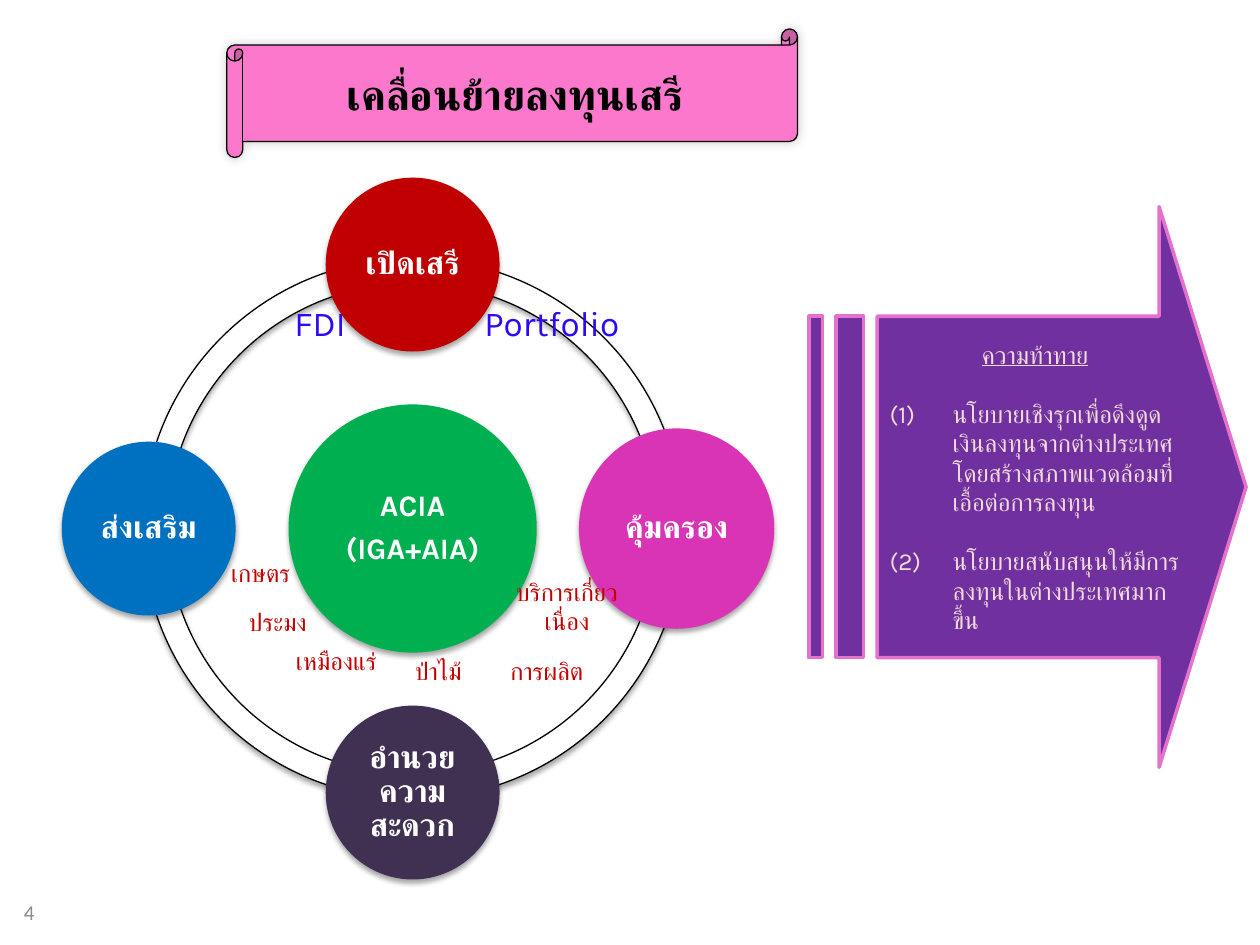
from lxml import etree
from pptx import Presentation
from pptx.dml.color import RGBColor
from pptx.enum.shapes import MSO_SHAPE
from pptx.enum.text import MSO_ANCHOR, PP_ALIGN
from pptx.oxml.ns import qn
from pptx.util import Inches, Pt

OVAL = MSO_SHAPE.OVAL
BLOCK_ARC = MSO_SHAPE.BLOCK_ARC
STRIPED_ARROW = MSO_SHAPE.STRIPED_RIGHT_ARROW
SCROLL = MSO_SHAPE.HORIZONTAL_SCROLL
MIDDLE = MSO_ANCHOR.MIDDLE
TOP = MSO_ANCHOR.TOP
CENTER = PP_ALIGN.CENTER
LEFT = PP_ALIGN.LEFT

WIDTH, HEIGHT = Inches(10), Inches(7.5)
COLUMNS, ROWS = 100, 75
FONT = "Karla"
RING_X, RING_Y, RING_RADIUS = 32.75, 41.95, 21.45
QUARTER = 54
SOFT_SHADOW = (35, 3.1, 1.8, 90)
SCROLL_SHADOW = (20, 6, 0, 225)

SECTORS = [("ACIA\n(IGA+AIA)", 0, 0, 19.7, 19.7, "00B050", 17),
           ("เปิดเสรี", 0, -20.95, 13.8, 13.8, "C00000", 18),
           ("คุ้มครอง", 20.95, 0, 15.5, 15.9, "D834B5", 18),
           ("อำนวยความสะดวก", 0, 20.95, 13.8, 13.8, "403152", 18),
           ("ส่งเสริม", -20.95, 0, 13.8, 13.8, "0070C0", 18)]
INDUSTRIES = [("การผลิต", 38.3, 51.6, 10.2, 3.4),
              ("ป่าไม้", 30.5, 51.6, 8.6, 3.4),
              ("เหมืองแร่", 21.1, 50.8, 11.2, 3.4),
              ("ประมง", 18, 47.7, 8.1, 3.4),
              ("เกษตร", 16.4, 43.8, 8.6, 3.4),
              ("บริการเกี่ยวเนื่อง", 39.1, 45.3, 11.8, 5.7)]
INVESTMENTS = [("FDI", 21.1, 23.4, 8.6, 4.4), ("Portfolio", 36.7, 23.4, 14.2, 4.4)]
CHALLENGES = ["ความท้าทาย",
              "นโยบายเชิงรุกเพื่อดึงดูดเงินลงทุนจากต่างประเทศ โดยสร้างสภาพแวดล้อมที่เอื้อต่อการลงทุน",
              "นโยบายสนับสนุนให้มีการลงทุนในต่างประเทศมากขึ้น"]


def color(value):
    return RGBColor.from_string(value)


def cells(left, top, width, height):
    return (round(left * WIDTH / COLUMNS), round(top * HEIGHT / ROWS),
            round(width * WIDTH / COLUMNS), round(height * HEIGHT / ROWS))


def add_shadow(shape, opacity, blur, distance, angle):
    effects = shape._element.spPr.find(qn("a:effectLst"))
    outer = etree.SubElement(effects, qn("a:outerShdw"), blurRad=str(Pt(blur)),
                             dist=str(Pt(distance)), dir=str(angle * 60000), rotWithShape="0")
    black = etree.SubElement(outer, qn("a:srgbClr"), val="000000")
    etree.SubElement(black, qn("a:alpha"), val=str(opacity * 1000))


def add_figure(slide, kind, box, fill, line=None, line_width=0.75, adjustments=(), shadow=None):
    figure = slide.shapes.add_shape(kind, *cells(*box))
    for index, value in enumerate(adjustments):
        figure.adjustments[index] = value
    figure.fill.solid()
    figure.fill.fore_color.rgb = color(fill)
    if line:
        figure.line.color.rgb = color(line)
        figure.line.width = Pt(line_width)
    else:
        figure.line.fill.background()
    figure.shadow.inherit = False
    if shadow:
        add_shadow(figure, *shadow)
    return figure


def write(shape, text, size, ink, bold=False, align=CENTER, anchor=MIDDLE, font=FONT):
    frame = shape.text_frame
    frame.text = text
    frame.word_wrap = True
    frame.vertical_anchor = anchor
    for paragraph in frame.paragraphs:
        paragraph.alignment = align
        for run in paragraph.runs:
            run.font.name = font
            run.font.size = Pt(size)
            run.font.bold = bold
            run.font.color.rgb = color(ink)
            etree.SubElement(run.font._element, qn("a:cs"), typeface=font)
    return frame


def add_label(slide, text, box, size, ink, **style):
    write(slide.shapes.add_textbox(*cells(*box)), text, size, ink, **style)


def add_ring(slide):
    box = (RING_X - RING_RADIUS, RING_Y - RING_RADIUS, 2 * RING_RADIUS, 2 * RING_RADIUS)
    for start in (2, 1, 0, 3):
        angles = (start * QUARTER, (start + 1) % 4 * QUARTER, 0.046)
        add_figure(slide, BLOCK_ARC, box, "FFFFFF", "000000",
                   adjustments=angles, shadow=SOFT_SHADOW)


def add_sector(slide, text, dx, dy, width, height, fill, size):
    box = (RING_X + dx - width / 2, RING_Y + dy - height / 2, width, height)
    disc = add_figure(slide, OVAL, box, fill, shadow=SOFT_SHADOW)
    frame = write(disc, text, size, "FFFFFF", bold=True)
    frame.margin_left = frame.margin_right = Inches(0.03)
    frame.margin_top = frame.margin_bottom = Inches(0.03)
    for paragraph in frame.paragraphs:
        paragraph.line_spacing = 0.9
        paragraph.space_after = Pt(6)


def number_paragraph(paragraph):
    properties = paragraph._p.get_or_add_pPr()
    properties.set("marL", str(Inches(0.5)))
    properties.set("indent", str(-Inches(0.5)))
    etree.SubElement(properties, qn("a:buFont"), typeface="+mj-lt")
    etree.SubElement(properties, qn("a:buAutoNum"), type="arabicParenBoth")


def add_challenges(slide):
    arrow = add_figure(slide, STRIPED_ARROW, (64.2, 16.4, 34.7, 44.5), "7030A0",
                       "E472CC", 2, adjustments=(0.609, 0.199))
    heading, *policies = write(arrow, "\n".join(CHALLENGES), 14, "F2DCDB").paragraphs
    heading.runs[0].font.underline = True
    for policy in policies:
        policy.alignment = LEFT
        policy.space_before = Pt(17)
        number_paragraph(policy)


def add_title(slide):
    add_figure(slide, SCROLL, (18, 2.3, 45.3, 10.2), "FC78CD", "000000",
               adjustments=(0.125,), shadow=SCROLL_SHADOW)
    title = slide.shapes.title
    title.left, title.top, title.width, title.height = cells(19.3, 3.6, 43.2, 7.6)
    write(title, "เคลื่อนย้ายลงทุนเสรี", 24, "000000", bold=True)
    slide.shapes._spTree.append(title._element)


def main():
    deck = Presentation()
    deck.slide_width, deck.slide_height = WIDTH, HEIGHT
    slide = deck.slides.add_slide(deck.slide_layouts[5])
    add_ring(slide)
    for sector in SECTORS:
        add_sector(slide, *sector)
    add_label(slide, "4", (0.9, 70.3, 5.8, 4.2), 12, "8C8C8C", align=LEFT, font="Calibri")
    add_challenges(slide)
    for text, *box in INDUSTRIES:
        add_label(slide, text, box, 14, "C00000", anchor=TOP)
    for text, *box in INVESTMENTS:
        add_label(slide, text, box, 20, "2C0AF6", anchor=TOP)
    add_title(slide)
    deck.save("out.pptx")


if __name__ == "__main__":
    main()
